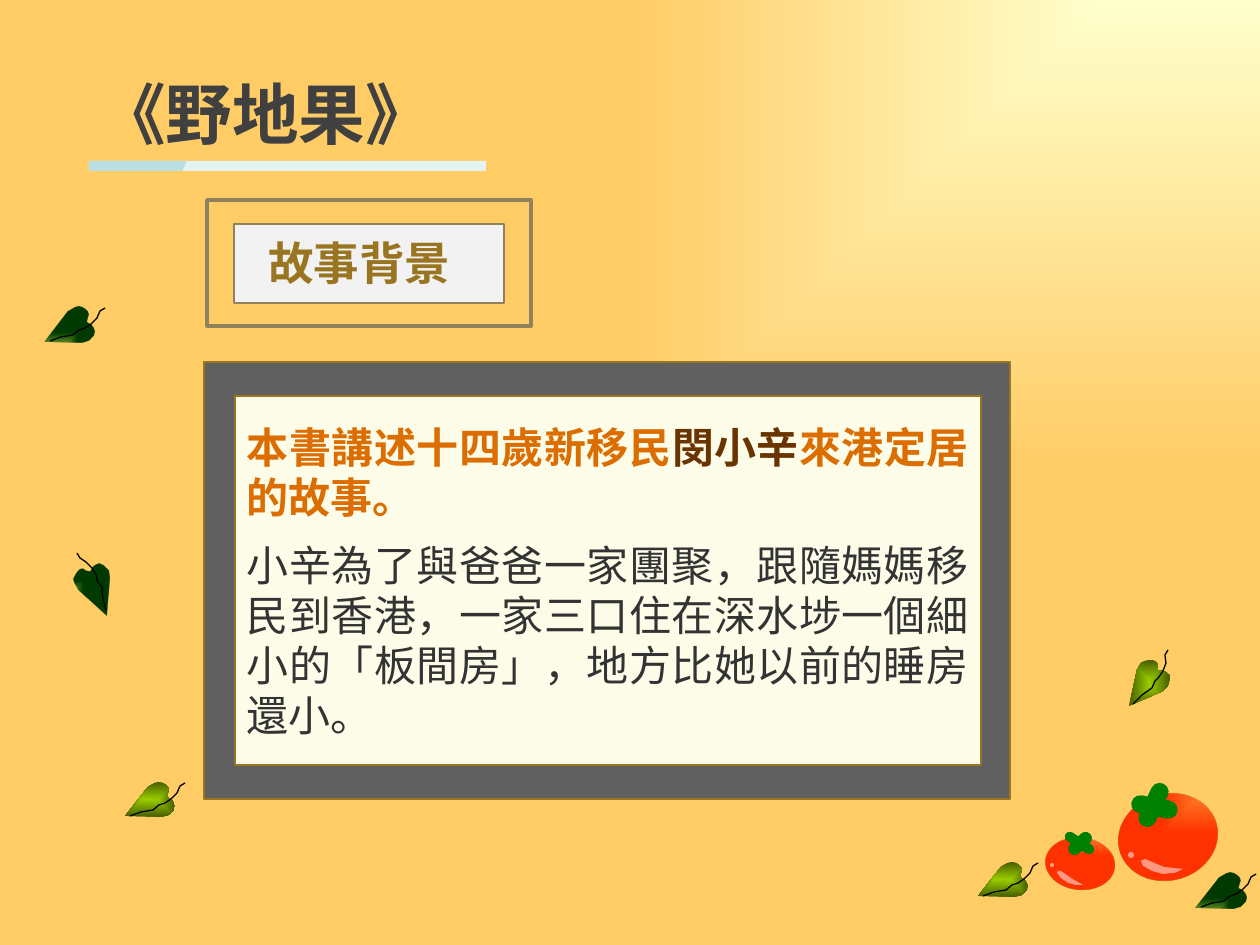
"""Build the story background slide for the book 《野地果》."""
from dataclasses import dataclass
from math import cos, radians, sin
from typing import NamedTuple, Optional

from lxml.etree import SubElement
from pptx import Presentation
from pptx.dml.color import RGBColor
from pptx.enum.shapes import MSO_SHAPE as Preset
from pptx.enum.text import MSO_ANCHOR as Anchor, PP_ALIGN as Align
from pptx.oxml.ns import qn
from pptx.util import Pt

PX = 914400 / 126


class Stop(NamedTuple):
    color: str
    alpha: int = 100


class Gradient(NamedTuple):
    start: Stop
    end: Stop
    focus: tuple


class Box(NamedTuple):
    left: int
    top: int
    width: int
    height: int
    turn: float = 0

    def emu(self) -> list:
        return [round(length * PX) for length in self[:4]]


@dataclass(frozen=True)
class Theme:
    font: str = "Noto Sans CJK SC"
    latin: str = "Times New Roman"
    title_size: int = 38
    heading_size: int = 26
    body_size: int = 24
    title: str = "404040"
    heading: str = "997521"
    plate: str = "F2F2F2"
    plate_line: str = "91825E"
    frame: str = "606060"
    panel: str = "FCFCE9"
    lead: str = "DC6D00"
    person: str = "6A3400"
    body: str = "333333"
    bar: str = "E4F3F4"
    accent: str = "BBE0E3"
    stem: str = "008000"
    shine: Stop = Stop("FFFFFF", 50)
    vein: str = "000000"
    sky: Gradient = Gradient(Stop("FFFFCC"), Stop("FFCC66"), (100, 0, 0, 100))
    skin: Gradient = Gradient(Stop("FF9933", 90), Stop("FF3300"), (100, 0, 0, 100))
    dark_leaf: Gradient = Gradient(Stop("008000", 40), Stop("003B00"), (0, 100, 100, 0))
    light_leaf: Gradient = Gradient(Stop("99CC00"), Stop("475E00"), (50, 50, 50, 50))


@dataclass(frozen=True)
class Tomato:
    skin: Box
    spot: Box
    stems: tuple
    shine: tuple


@dataclass(frozen=True)
class Leaf:
    tip: tuple
    fill: Gradient
    turn: float = 0


THEME = Theme()
BLADE = ((42, -19), (43, -23), (44, -26), (43, -29), (41, -31), (38, -33), (34, -34), (30, -33),
         (23, -29), (0, 0), (37, 1), (44, -1), (49, -6), (50, -10), (49, -13), (47, -16))
VEIN = ((5, 0), (16, -4), (28, -6), (34, -11), (40, -13), (46, -17), (52, -23), (55, -30), (60, -33))
TOMATOES = (
    Tomato(Box(1118, 794, 100, 86, -15.8), Box(1128, 852, 6, 6),
           (Box(1130, 796, 47, 18, 115), Box(1131, 798, 47, 18, 10.9)),
           ((1164, 867), (1183, 869), (1175, 873), (1163, 874), (1152, 871), (1143, 866), (1141, 861), (1145, 859))),
    Tomato(Box(1046, 838, 69, 52, 5.9), Box(1050, 863, 4, 4),
           (Box(1066, 837, 28, 13, 136.7), Box(1063, 838, 33, 10, 32.6)),
           ((1071, 878), (1083, 885), (1076, 885), (1068, 883), (1061, 878), (1057, 873), (1058, 871), (1061, 871))),
)
LEAVES = (
    Leaf((45, 341), THEME.dark_leaf),
    Leaf((106, 615), THEME.dark_leaf, -86.2),
    Leaf((1196, 907), THEME.dark_leaf),
    Leaf((1129, 706), THEME.light_leaf, -26),
    Leaf((125, 816), THEME.light_leaf),
    Leaf((978, 896), THEME.light_leaf),
)


def add_stop(parent, stop: Stop) -> None:
    """Append a colour with its opacity."""
    color = SubElement(parent, qn("a:srgbClr"), val=stop.color)
    if stop.alpha < 100:
        SubElement(color, qn("a:alpha"), val=str(stop.alpha * 1000))


def paint(fill, properties, color) -> None:
    """Fill with a plain colour, a translucent stop or a gradient."""
    fill.solid()
    if isinstance(color, str):
        fill.fore_color.rgb = RGBColor.from_string(color)
        return
    solid = properties.find(qn("a:solidFill"))
    if isinstance(color, Stop):
        add_stop(solid, color)
        return
    gradient = SubElement(properties, qn("a:gradFill"), rotWithShape="1")
    stops = SubElement(gradient, qn("a:gsLst"))
    for position, stop in ((0, color.start), (100000, color.end)):
        add_stop(SubElement(stops, qn("a:gs"), pos=str(position)), stop)
    shade = SubElement(gradient, qn("a:path"), path="rect")
    sides = {side: str(part * 1000) for side, part in zip("ltrb", color.focus)}
    SubElement(shade, qn("a:fillToRect"), **sides)
    properties.replace(solid, gradient)


def style(shape, fill=None, line: Optional[str] = None, weight: float = 1) -> None:
    """Set fill and outline and drop the shadow."""
    shape.shadow.inherit = False
    if fill is None:
        shape.fill.background()
    else:
        paint(shape.fill, shape._element.spPr, fill)
    if line is None:
        shape.line.fill.background()
    else:
        shape.line.color.rgb = RGBColor.from_string(line)
        shape.line.width = Pt(weight)


def add_preset(page, kind, box: Box, fill=None, line: Optional[str] = None, weight: float = 1):
    """Draw a preset shape."""
    shape = page.shapes.add_shape(kind, *box.emu())
    shape.rotation = box.turn
    style(shape, fill, line, weight)
    return shape


def add_outline(page, points, fill=None, line: Optional[str] = None, weight: float = 1) -> None:
    """Draw a freeform, closed when it is filled."""
    builder = page.shapes.build_freeform(*points[0], scale=PX)
    builder.add_line_segments(points[1:], close=fill is not None)
    style(builder.convert_to_shape(), fill, line, weight)


def add_tomato(page, tomato: Tomato) -> None:
    """Draw a tomato with its stem and highlights."""
    add_preset(page, Preset.OVAL, tomato.skin, THEME.skin)
    add_preset(page, Preset.OVAL, tomato.spot, THEME.shine)
    for stem in tomato.stems:
        add_preset(page, Preset.ROUNDED_RECTANGLE, stem, THEME.stem).adjustments[0] = 0.5
    add_outline(page, tomato.shine, THEME.shine)


def add_leaf(page, leaf: Leaf) -> None:
    """Draw a leaf turned about its tip."""
    across, down = cos(radians(leaf.turn)), sin(radians(leaf.turn))

    def place(points) -> list:
        return [(round(leaf.tip[0] + x * across - y * down), round(leaf.tip[1] + x * down + y * across))
                for x, y in points]

    add_outline(page, place(BLADE), leaf.fill)
    add_outline(page, place(VEIN), line=THEME.vein, weight=0.75)


def set_font(para, name: str, size: int, bold: bool, color: str) -> None:
    """Set the font of a whole paragraph."""
    font = para.font
    font.name, font.size, font.bold = name, Pt(size), bold
    font.color.rgb = RGBColor.from_string(color)
    SubElement(font._rPr, qn("a:ea"), typeface=THEME.font)


def write_label(shape, box: Box, text: str, size: int, color: str) -> None:
    """Place one bold line of text."""
    shape.left, shape.top, shape.width, shape.height = box.emu()
    frame = shape.text_frame
    frame.word_wrap, frame.vertical_anchor = False, Anchor.MIDDLE
    frame.margin_left = frame.margin_right = round(10 * PX)
    frame.margin_top = frame.margin_bottom = round(5 * PX)
    para = frame.paragraphs[0]
    para.text, para.alignment = text, Align.LEFT
    set_font(para, THEME.font, size, True, color)


def write_story(shape, box: Box) -> None:
    """Turn the body placeholder into the story panel."""
    shape.left, shape.top, shape.width, shape.height = box.emu()
    paint(shape.fill, shape._element.spPr, THEME.panel)
    shape.line.color.rgb = RGBColor.from_string(THEME.heading)
    shape.line.width = Pt(1)
    frame = shape.text_frame
    frame.word_wrap, frame.vertical_anchor = True, Anchor.TOP
    frame.margin_left = frame.margin_right = round(12 * PX)
    frame.margin_top = round(26 * PX)
    lead, story = frame.paragraphs[0], frame.add_paragraph()
    for text in ("本書講述十四歲新移民", "閔小辛", "來港定居的故事。"):
        span = lead.add_run()
        span.text = text
        if text == "閔小辛":
            span.font.color.rgb = RGBColor.from_string(THEME.person)
    story.text = "小辛為了與爸爸一家團聚，跟隨媽媽移民到香港，一家三口住在深水埗一個細小的「板間房」，地方比她以前的睡房還小。"
    for para, bold, color, gap in ((lead, True, THEME.lead, 0), (story, False, THEME.body, 10)):
        para.alignment, para.line_spacing, para.space_before = Align.JUSTIFY, Pt(28.6), Pt(gap)
        properties = para._p.get_or_add_pPr()
        properties.set("marL", "0")
        properties.set("indent", "0")
        SubElement(properties, qn("a:buNone"))
        set_font(para, THEME.latin, THEME.body_size, bold, color)


def main() -> None:
    """Assemble and save the deck."""
    deck = Presentation()
    deck.slide_width, deck.slide_height = round(1260 * PX), round(945 * PX)
    page = deck.slides.add_slide(deck.slide_layouts[1])
    title, body = page.placeholders
    background = page.background.fill
    background.solid()
    paint(background, page._element.find(".//" + qn("p:bgPr")), THEME.sky)
    for tomato in TOMATOES:
        add_tomato(page, tomato)
    for leaf in LEAVES:
        add_leaf(page, leaf)
    add_preset(page, Preset.RECTANGLE, Box(89, 161, 397, 10), THEME.bar)
    add_outline(page, ((89, 161), (187, 161), (182, 171), (89, 171)), THEME.accent)
    write_label(title, Box(89, 67, 386, 91), "《野地果》", THEME.title_size, THEME.title)
    add_preset(page, Preset.RECTANGLE, Box(207, 200, 324, 126), line=THEME.plate_line, weight=2)
    add_preset(page, Preset.RECTANGLE, Box(234, 224, 270, 79), THEME.plate, THEME.plate_line)
    heading = Box(258, 229, 221, 66)
    write_label(page.shapes.add_textbox(*heading.emu()), heading, "故事背景", THEME.heading_size, THEME.heading)
    add_preset(page, Preset.RECTANGLE, Box(204, 362, 806, 437), THEME.frame, THEME.heading)
    write_story(body, Box(235, 396, 746, 369))
    page.shapes._spTree.append(body._element)
    deck.save("out.pptx")


if __name__ == "__main__":
    main()
